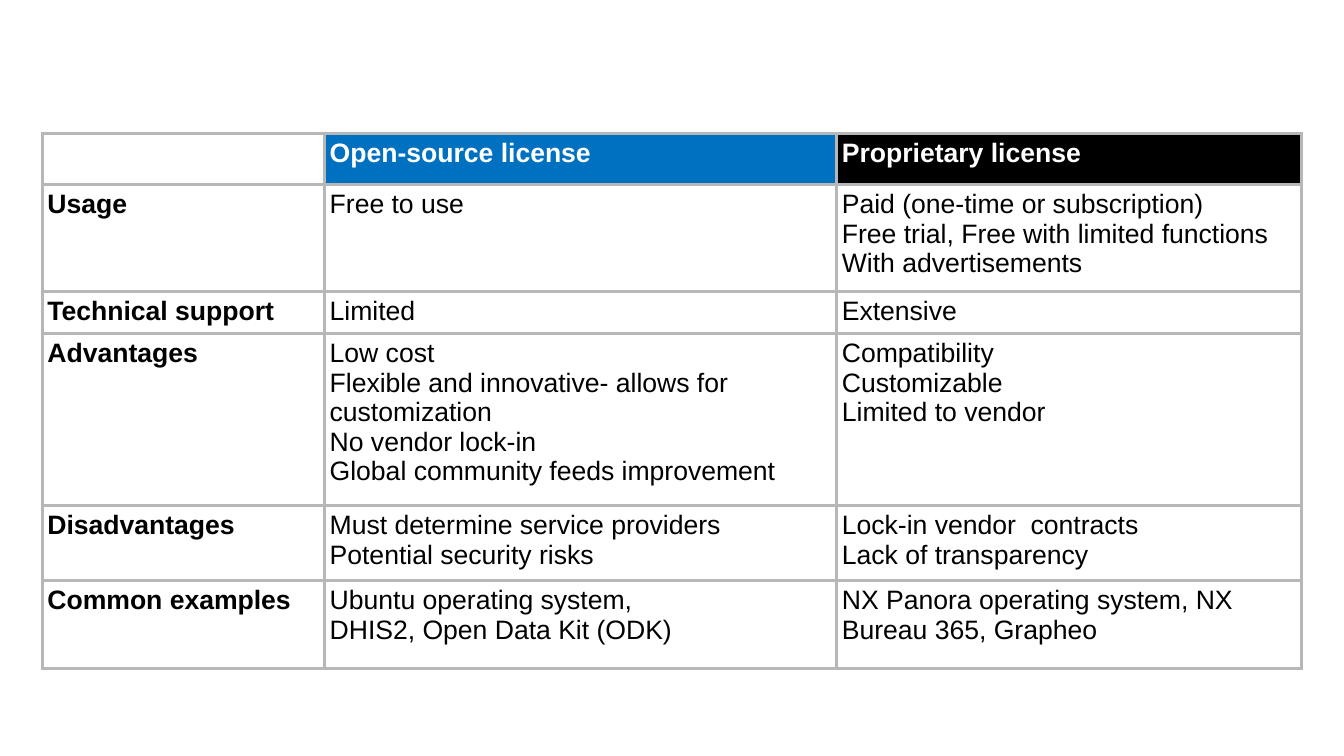
from dataclasses import dataclass
from typing import Optional

from lxml import etree
from pptx import Presentation
from pptx import util as u
from pptx.dml.color import RGBColor
from pptx.oxml import ns

WHITE = RGBColor(0xFF, 0xFF, 0xFF)
BLACK = RGBColor(0, 0, 0)
BLUE = RGBColor(0, 0x70, 0xC0)
GREY = RGBColor(0xB7, 0xB7, 0xB7)

FONT = "Arial"
FONT_SIZE = 19
COLUMN_WIDTHS = (2.8, 5.08, 4.61)
HEADER_FILLS = (None, BLUE, BLACK)


@dataclass(frozen=True)
class Row:
    height: float
    label: str
    open_source: str
    proprietary: str


ROWS = (
    Row(0.51, "", "Open-source license", "Proprietary license"),
    Row(1.06, "Usage", "Free to use",
        "Paid (one-time or subscription)\n"
        "Free trial, Free with limited functions\n"
        "With advertisements"),
    Row(0.42, "Technical support", "Limited", "Extensive"),
    Row(1.71, "Advantages",
        "Low cost\n"
        "Flexible and innovative- allows for customization\n"
        "No vendor lock-in\n"
        "Global community feeds improvement",
        "Compatibility\nCustomizable\nLimited to vendor"),
    Row(0.74, "Disadvantages",
        "Must determine service providers\nPotential security risks",
        "Lock-in vendor  contracts\nLack of transparency"),
    Row(0.87, "Common examples",
        "Ubuntu operating system,\nDHIS2, Open Data Kit (ODK)",
        "NX Panora operating system, NX Bureau 365, Grapheo"),
)


def add_borders(cell, color: RGBColor, width: float) -> None:
    tc_pr = cell._tc.get_or_add_tcPr()
    for side in ("lnL", "lnR", "lnT", "lnB"):
        line = etree.SubElement(tc_pr, ns.qn(f"a:{side}"), w=str(u.Pt(width)))
        fill = etree.SubElement(line, ns.qn("a:solidFill"))
        etree.SubElement(fill, ns.qn("a:srgbClr"), val=str(color))


def fill_cell(cell, content: str, color: RGBColor, bold: bool,
              fill: Optional[RGBColor]) -> None:
    cell.margin_left = cell.margin_right = u.Inches(0.05)
    cell.margin_top = cell.margin_bottom = u.Inches(0.05)
    add_borders(cell, GREY, 2.4)
    if fill is None:
        cell.fill.background()
    else:
        cell.fill.solid()
        cell.fill.fore_color.rgb = fill
    if not content:
        return
    cell.text_frame.text = content
    for p in cell.text_frame.paragraphs:
        for r in p.runs:
            r.font.name = FONT
            r.font.size = u.Pt(FONT_SIZE)
            r.font.bold = bold
            r.font.color.rgb = color


def add_license_table(s) -> None:
    table = s.shapes.add_table(
        len(ROWS), len(COLUMN_WIDTHS), u.Inches(0.42), u.Inches(1.32),
        u.Inches(sum(COLUMN_WIDTHS)),
        u.Inches(sum(row.height for row in ROWS))).table
    table.first_row = False
    table.horz_banding = False
    for column, width in zip(table.columns, COLUMN_WIDTHS):
        column.width = u.Inches(width)
    for i, row in enumerate(ROWS):
        table.rows[i].height = u.Inches(row.height)
        header = i == 0
        for j, content in enumerate((row.label, row.open_source, row.proprietary)):
            fill_cell(table.cell(i, j), content, WHITE if header else BLACK,
                      header or j == 0, HEADER_FILLS[j] if header else None)


def main() -> None:
    prs = Presentation()
    prs.slide_width, prs.slide_height = u.Inches(13.33), u.Inches(7.5)
    s = prs.slides.add_slide(prs.slide_layouts[6])
    add_license_table(s)
    prs.save("out.pptx")


if __name__ == "__main__":
    main()
